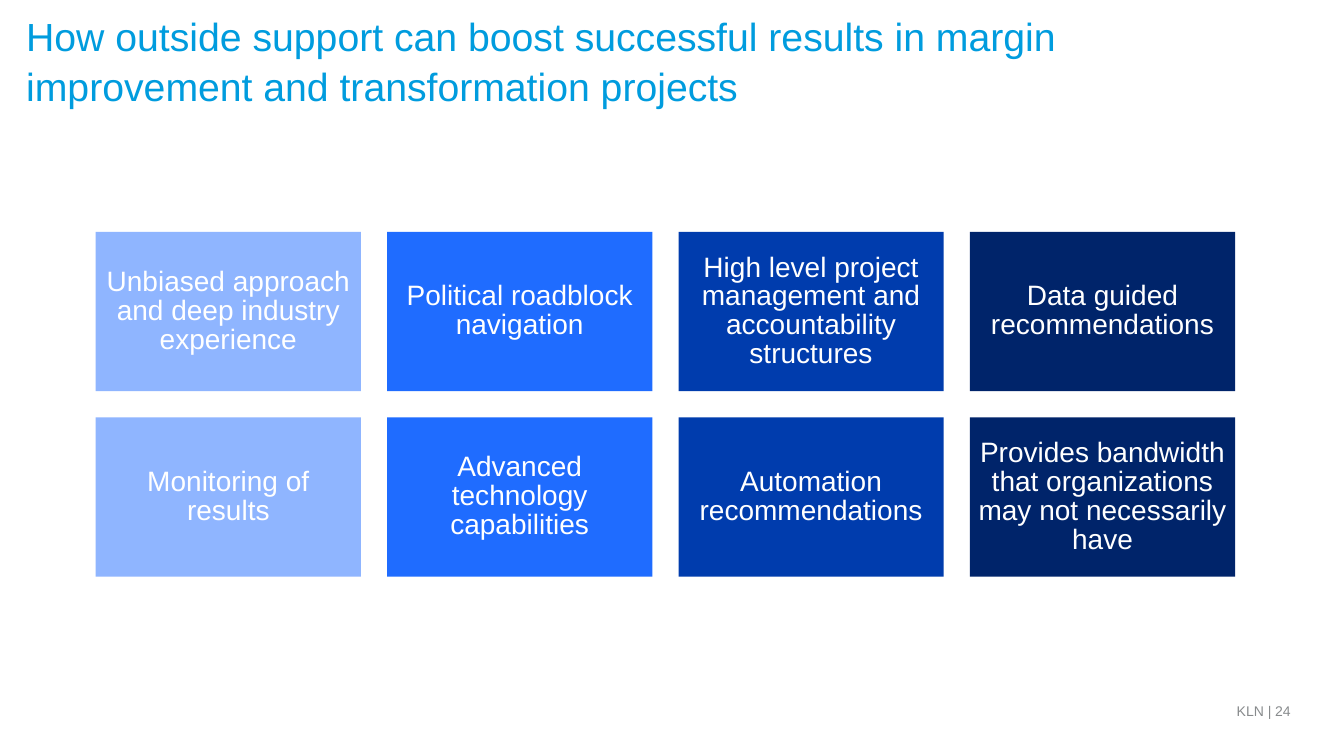
from pptx import Presentation
from pptx.dml.color import RGBColor
from pptx.enum.shapes import MSO_SHAPE
from pptx.enum.text import MSO_ANCHOR, MSO_AUTO_SIZE, PP_ALIGN
from pptx.util import Inches, Pt

FONT = "Arial"
WHITE = RGBColor(0xFF, 0xFF, 0xFF)
TITLE_BLUE = RGBColor(0x00, 0x9C, 0xDE)
FOOTER_GREY = RGBColor(0x88, 0x8B, 0x8D)
COLUMN_BLUES = [
    RGBColor(0x8F, 0xB5, 0xFF),
    RGBColor(0x1F, 0x6C, 0xFF),
    RGBColor(0x00, 0x3C, 0xAD),
    RGBColor(0x00, 0x24, 0x6A),
]

BENEFITS = [
    [
        "Unbiased approach and deep industry experience",
        "Political roadblock navigation",
        "High level project management and accountability structures",
        "Data guided recommendations",
    ],
    [
        "Monitoring of results",
        "Advanced technology capabilities",
        "Automation recommendations",
        "Provides bandwidth that organizations may not necessarily have",
    ],
]
CARD_WIDTH, CARD_HEIGHT = 2.63, 1.58
GRID_LEFT, GRID_TOP, GAP = 0.95, 2.3, 0.26
CARD_INSET, SHORT_TEXT_INSET = 0.05, 0.3


class SlideBuilder:
    def __init__(self, deck):
        self.page = deck.slides.add_slide(deck.slide_layouts[5])

    def set_text(self, shape, text, size, color, align, spacing=None):
        shape.text_frame.text = text
        para = shape.text_frame.paragraphs[0]
        para.alignment = align
        para.line_spacing = spacing
        para.font.name = FONT
        para.font.size = Pt(size)
        para.font.color.rgb = color

    def set_insets(self, frame, side, top=0):
        frame.margin_left = frame.margin_right = Inches(side)
        frame.margin_top = frame.margin_bottom = Inches(top)

    def title(self, text, left, top, width, height):
        title = self.page.shapes.title
        title.left, title.top = Inches(left), Inches(top)
        title.width, title.height = Inches(width), Inches(height)
        frame = title.text_frame
        self.set_insets(frame, 0.01, 0.02)
        frame.word_wrap = True
        frame.auto_size = MSO_AUTO_SIZE.NONE
        frame.vertical_anchor = MSO_ANCHOR.TOP
        self.set_text(title, text, 28, TITLE_BLUE, PP_ALIGN.LEFT, 1.07)

    def card(self, text, left, top, fill):
        card = self.page.shapes.add_shape(
            MSO_SHAPE.RECTANGLE, Inches(left), Inches(top),
            Inches(CARD_WIDTH), Inches(CARD_HEIGHT))
        card.shadow.inherit = False
        card.fill.solid()
        card.fill.fore_color.rgb = fill
        card.line.fill.background()
        frame = card.text_frame
        inset = SHORT_TEXT_INSET if len(text) < 25 else CARD_INSET
        self.set_insets(frame, inset)
        frame.word_wrap = True
        frame.vertical_anchor = MSO_ANCHOR.MIDDLE
        self.set_text(card, text, 20, WHITE, PP_ALIGN.CENTER, Pt(20.6))

    def footer(self, text, left, top, width, height):
        box = self.page.shapes.add_textbox(
            Inches(left), Inches(top), Inches(width), Inches(height))
        box.text_frame.word_wrap = True
        box.text_frame.vertical_anchor = MSO_ANCHOR.MIDDLE
        self.set_text(box, text, 10, FOOTER_GREY, PP_ALIGN.RIGHT)


def main():
    deck = Presentation()
    deck.slide_width, deck.slide_height = Inches(13.33), Inches(7.5)
    builder = SlideBuilder(deck)
    builder.title(
        "How outside support can boost successful results in margin "
        "improvement and transformation projects",
        0.25, 0.07, 10.92, 0.96)
    for row, texts in enumerate(BENEFITS):
        for column, (text, fill) in enumerate(zip(texts, COLUMN_BLUES)):
            builder.card(
                text,
                GRID_LEFT + column * (CARD_WIDTH + GAP),
                GRID_TOP + row * (CARD_HEIGHT + GAP),
                fill)
    builder.footer("KLN | 24", 12.08, 6.94, 0.82, 0.23)
    deck.save("out.pptx")


if __name__ == "__main__":
    main()
